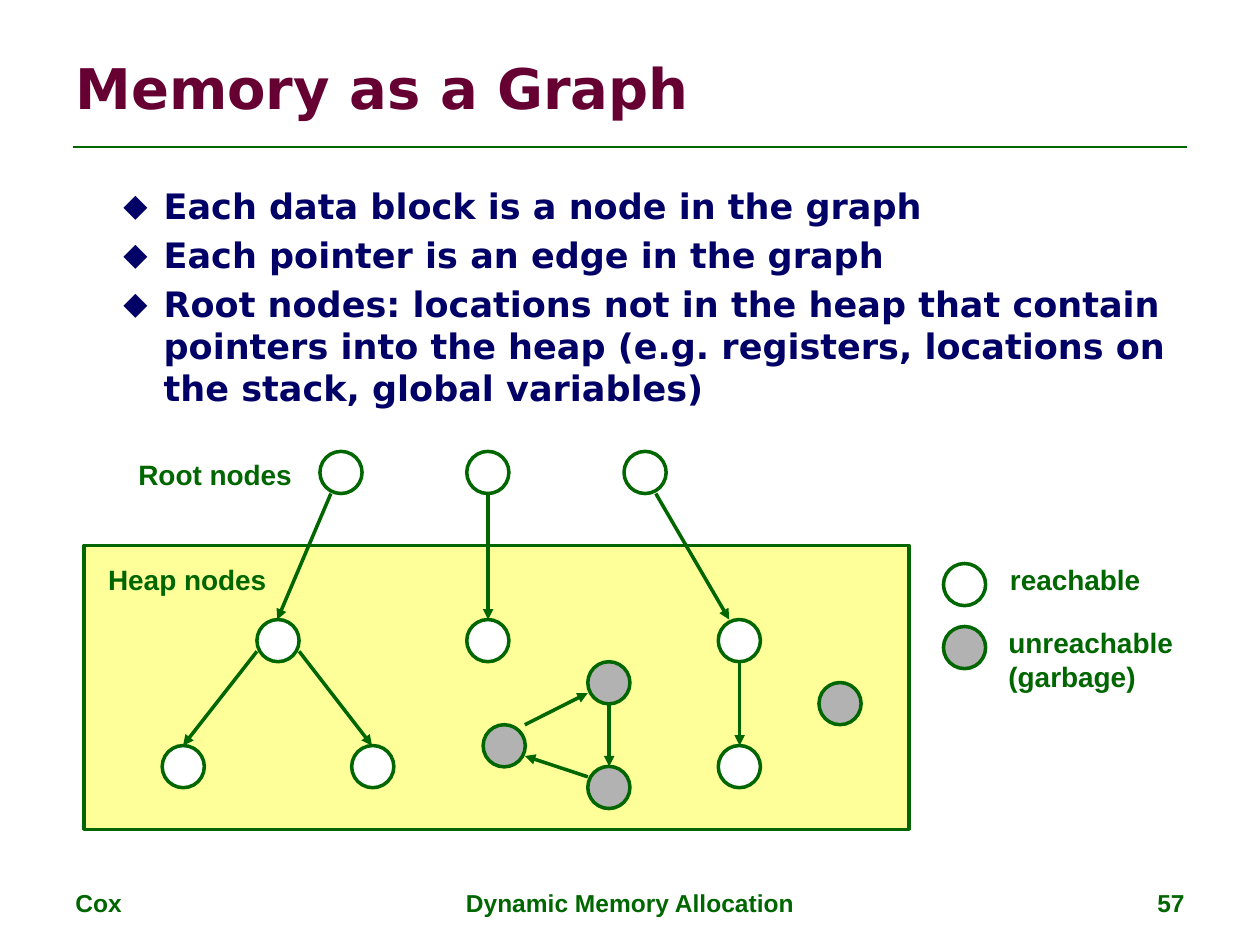
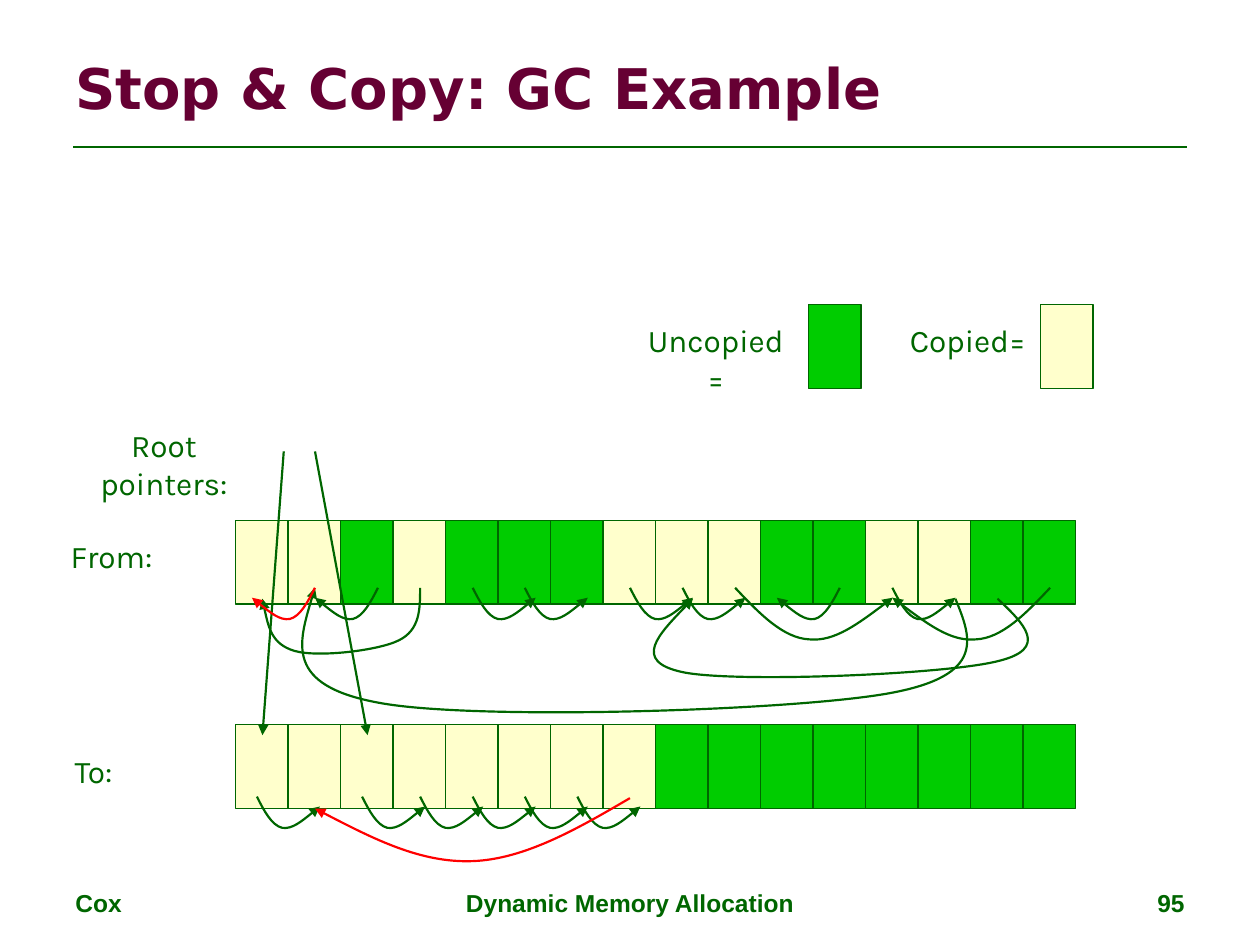
from lxml.etree import SubElement
from pptx import Presentation
from pptx.dml.color import RGBColor
from pptx.enum.shapes import MSO_CONNECTOR, MSO_SHAPE
from pptx.enum.text import MSO_ANCHOR, PP_ALIGN
from pptx.oxml.ns import qn
from pptx.util import Cm, Pt

COLORS = {
    "green": "006600", "maroon": "660033", "navy": "000066",
    "heap": "FFFF99", "reachable": "FFFFFF", "garbage": "B2B2B2",
    "copied": "FFFFCC", "uncopied": "00CC00", "red": "FF0000",
}
STYLES = {
    "title": ("DejaVu Sans", 32, "maroon", True),
    "body": ("DejaVu Sans", 20, "navy", True),
    "footer": ("Arial", 14, "green", True),
    "label": ("Arial", 16, "green", True),
    "caption": ("Karla", 18, "green", False),
}


def write(slide, text, style, left, top, width, height, align=PP_ALIGN.LEFT, wrap=True):
    frame = slide.shapes.add_textbox(Cm(left), Cm(top), Cm(width), Cm(height)).text_frame
    frame.word_wrap = wrap
    frame.text = text
    font, size, color, bold = STYLES[style]
    for paragraph in frame.paragraphs:
        paragraph.alignment = align
        for run in paragraph.runs:
            run.font.name = font
            run.font.size = Pt(size)
            run.font.bold = bold
            run.font.color.rgb = RGBColor.from_string(COLORS[color])
    return frame


def outline(item, width, color="green", fill=None, arrow=False):
    item.line.color.rgb = RGBColor.from_string(COLORS[color])
    item.line.width = Pt(width)
    if arrow:
        SubElement(item.line._get_or_add_ln(), qn("a:tailEnd"), type="triangle")
    if hasattr(item, "shadow"):
        item.shadow.inherit = False
    else:
        SubElement(item._element.spPr, qn("a:effectLst"))
    if fill:
        item.fill.solid()
        item.fill.fore_color.rgb = RGBColor.from_string(COLORS[fill])


prs = Presentation()
prs.slide_width, prs.slide_height = Cm(25.4), Cm(19.05)

slides = []
for title, number in [("Memory as a Graph", "57"), ("Stop & Copy: GC Example", "95")]:
    slide = prs.slides.add_slide(prs.slide_layouts[6])
    slides.append(slide)
    rule = slide.shapes.add_connector(MSO_CONNECTOR.STRAIGHT, Cm(1.48), Cm(2.96), Cm(23.92), Cm(2.96))
    outline(rule, 1.5)
    write(slide, title, "title", 1.27, 0.76, 22.86, 1.98).vertical_anchor = MSO_ANCHOR.MIDDLE
    write(slide, "Cox", "footer", 1.27, 17.78, 5.92, 0.89)
    write(slide, "Dynamic Memory Allocation", "footer", 8.68, 17.78, 8.04, 0.89, PP_ALIGN.CENTER)
    write(slide, number, "footer", 18.2, 17.78, 5.93, 0.89, PP_ALIGN.RIGHT)
graph, example = slides

heap = graph.shapes.add_shape(MSO_SHAPE.RECTANGLE, Cm(1.69), Cm(11), Cm(16.64), Cm(5.72))
outline(heap, 2, fill="heap")

points = write(
    graph,
    "Each data block is a node in the graph\n"
    "Each pointer is an edge in the graph\n"
    "Root nodes: locations not in the heap that contain pointers into the heap "
    "(e.g. registers, locations on the stack, global variables)",
    "body", 1.27, 3.6, 22.86, 5.2,
)
for point in points.paragraphs:
    point.space_before = Pt(4)
    properties = point._p.get_or_add_pPr()
    properties.set("marL", str(Cm(1.78)))
    properties.set("indent", str(Cm(-0.81)))
    SubElement(properties, qn("a:buSzPct"), val="90000")
    SubElement(properties, qn("a:buFont"), typeface="DejaVu Sans")
    SubElement(properties, qn("a:buChar"), char="◆")

NODE = 0.85
nodes = {
    "reachable": [
        (6.45, 9.1), (9.41, 9.1), (12.58, 9.1),
        (5.18, 12.49), (9.41, 12.49), (14.48, 12.49),
        (3.27, 15.03), (7.09, 15.03), (14.48, 15.03), (19.02, 11.36),
    ],
    "garbage": [(11.85, 13.34), (11.85, 15.45), (9.74, 14.61), (16.51, 13.76), (19.02, 12.63)],
}
for state, places in nodes.items():
    for left, top in places:
        node = graph.shapes.add_shape(MSO_SHAPE.OVAL, Cm(left), Cm(top), Cm(NODE), Cm(NODE))
        outline(node, 2, fill=state)

for text, left, top, width, height in [
    ("Root nodes", 2.54, 9.1, 3.61, 0.94),
    ("Heap nodes", 1.93, 11.22, 3.71, 0.94),
    ("reachable", 20.11, 11.22, 3.15, 0.94),
    ("unreachable\n(garbage)", 20.08, 12.49, 3.84, 1.63),
]:
    write(graph, text, "label", left, top, width, height, wrap=False)

edges = [
    (6.67, 9.95, 5.59, 12.49), (9.84, 9.95, 9.84, 12.49), (13.22, 9.95, 14.7, 12.49),
    (5.18, 13.13, 3.69, 15.03), (6.03, 13.13, 7.5, 15.03), (14.91, 13.34, 14.91, 15.03),
    (12.28, 14.19, 12.28, 15.45), (11.85, 15.66, 10.58, 15.24), (10.58, 14.61, 11.85, 13.97),
]
root_pointers = [(5.72, 9.1, 5.29, 14.82), (6.35, 9.1, 7.41, 14.82)]

CELL_HEIGHT = 1.69
PITCH = 16.93 / 16
cells = []
for top, row in [(10.49, "CCUCUUUCCCUUCCUU"), (14.61, "CCCCCCCCUUUUUUUU")]:
    for column, mark in enumerate(row):
        cells.append((4.75 + column * PITCH, top, mark))
cells += [(16.3, 6.14, "U"), (20.98, 6.14, "C")]
for left, top, mark in cells:
    cell = example.shapes.add_shape(MSO_SHAPE.RECTANGLE, Cm(left), Cm(top), Cm(PITCH), Cm(CELL_HEIGHT))
    outline(cell, 0.75, fill="copied" if mark == "C" else "uncopied")

for text, left, top, width, wrap in [
    ("Root pointers:", 1.07, 8.47, 4.47, True),
    ("From:", 1.16, 10.71, 2.18, False),
    ("To:", 1.16, 15.04, 1.45, False),
    ("Uncopied=", 12.73, 6.35, 3.4, True),
    ("Copied=", 18.06, 6.35, 2.9, False),
]:
    write(example, text, "caption", left, top, width, 1.02, PP_ALIGN.CENTER, wrap)

for slide, width, arrows in [(graph, 2, edges), (example, 1.25, root_pointers)]:
    for x1, y1, x2, y2 in arrows:
        arrow = slide.shapes.add_connector(MSO_CONNECTOR.STRAIGHT, Cm(x1), Cm(y1), Cm(x2), Cm(y2))
        outline(arrow, width, arrow=True)

hop = [(0, 0), (0.14, 0.28), (0.3, 0.58), (0.51, 0.63), (0.71, 0.66), (0.99, 0.43), (1.27, 0.2)]
leap = [(0, 0), (0.48, 0.51), (0.97, 1.02), (1.5, 1.04), (2.01, 1.09), (2.59, 0.64), (3.18, 0.2)]
far_loop = [
    (19.26, 12.07), (19.58, 12.85), (19.89, 13.61), (17.96, 13.97), (16.03, 14.33),
    (9.58, 14.53), (7.65, 14.17), (5.72, 13.82), (6.05, 12.85), (6.35, 11.85),
]
near_loop = [
    (8.47, 11.85), (8.47, 12.27), (8.47, 12.7), (8.04, 12.91), (7.62, 13.12),
    (6.38, 13.26), (5.93, 13.12), (5.47, 12.98), (5.38, 12.52), (5.29, 12.07),
]
right_loop = [
    (20.11, 12.07), (20.64, 12.57), (21.17, 13.08), (20.11, 13.33), (19.05, 13.6),
    (14.79, 13.77), (13.76, 13.55), (12.73, 13.33), (13.36, 12.7), (13.97, 12.07),
]
new_pointer = [
    (12.7, 16.09), (11.64, 16.71), (10.58, 17.32), (9.53, 17.36),
    (8.47, 17.4), (7.41, 16.85), (6.35, 16.3),
]
FROM_Y, TO_Y = 11.85, 16.06
pointers = [(leap, 21.17, FROM_Y, -1, "green"), (leap, 14.82, FROM_Y, 1, "green")]
pointers += [(hop, x, FROM_Y, 1, "green") for x in (12.7, 13.76, 9.53, 10.58, 17.99)]
pointers += [(hop, x, FROM_Y, -1, "green") for x in (16.93, 7.62)]
pointers += [(loop, 0, 0, 1, "green") for loop in (far_loop, near_loop, right_loop)]
pointers += [(hop, 6.35, FROM_Y, -1, "red")]
pointers += [(hop, x, TO_Y, 1, "green") for x in (5.18, 7.3, 8.47, 9.53, 10.58, 11.64)]
pointers += [(new_pointer, 0, 0, 1, "red")]

for curve, x, y, direction, color in pointers:
    start, *controls = [(Cm(x + direction * dx), Cm(y + dy)) for dx, dy in curve]
    builder = example.shapes.build_freeform(*start)
    builder.add_line_segments(controls, close=False)
    pointer = builder.convert_to_shape()
    segments = list(pointer._element.iter(qn("a:lnTo")))
    outlines = segments[0].getparent()
    for first in range(0, len(segments), 3):
        bezier = SubElement(outlines, qn("a:cubicBezTo"))
        for segment in segments[first:first + 3]:
            bezier.append(segment[0])
            outlines.remove(segment)
    pointer.fill.background()
    outline(pointer, 1.25, color, arrow=True)

prs.save("out.pptx")
